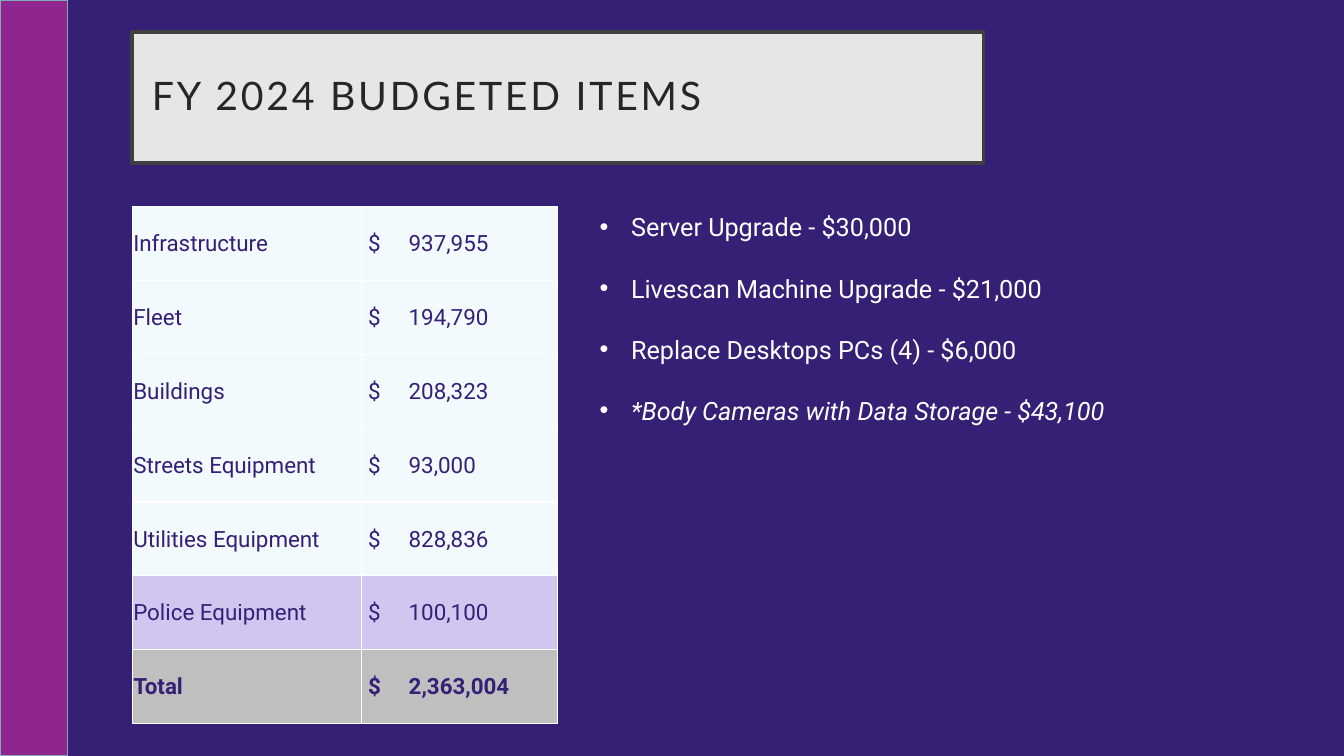
from lxml import etree
from pptx import Presentation
from pptx.dml.color import RGBColor
from pptx.enum.shapes import MSO_SHAPE
from pptx.enum.text import MSO_ANCHOR, MSO_AUTO_SIZE, PP_ALIGN
from pptx.oxml.ns import qn
from pptx.util import Cm, Pt

RECT = MSO_SHAPE.RECTANGLE
MIDDLE, TOP = MSO_ANCHOR.MIDDLE, MSO_ANCHOR.TOP
LEFT = PP_ALIGN.LEFT
FIXED = MSO_AUTO_SIZE.NONE

HUES = {
    "back": "352076", "stripe": "8F268F", "edge": "84A9B9",
    "panel": "E7E6E6", "frame": "404040", "title": "262626",
    "white": "FFFFFF", "ice": "F2FAFE", "lilac": "D0C6F0", "grey": "BFBFBF",
}

COSTS = [
    ("Infrastructure", "937,955", "ice"),
    ("Fleet", "194,790", "ice"),
    ("Buildings", "208,323", "ice"),
    ("Streets Equipment", "93,000", "ice"),
    ("Utilities Equipment", "828,836", "ice"),
    ("Police Equipment", "100,100", "lilac"),
    ("Total", "2,363,004", "grey"),
]
ITEMS = [
    "Server Upgrade - $30,000",
    "Livescan Machine Upgrade - $21,000",
    "Replace Desktops PCs (4) - $6,000",
    "*Body Cameras with Data Storage - $43,100",
]


def hue(name):
    return RGBColor.from_string(HUES[name])


def paint(shape, fill, line, width):
    shape.fill.solid()
    shape.fill.fore_color.rgb = hue(fill)
    shape.line.color.rgb = hue(line)
    shape.line.width = Pt(width)


def place(shape, left, top, width, height):
    shape.left, shape.top = Cm(left), Cm(top)
    shape.width, shape.height = Cm(width), Cm(height)


def write(para, text, size=16, color="back", face="Roboto", bold=False,
          italic=False, before=0, lines=1.0, track=0):
    para.alignment = LEFT
    para.space_before, para.line_spacing = Pt(before), lines
    run = para.add_run()
    run.text = text
    font = run.font
    font.name, font.size, font.bold, font.italic = face, Pt(size), bold, italic
    font.color.rgb = hue(color)
    if track:
        font._element.set("spc", str(track * 100))


def bullet(para, indent):
    props = para._p.get_or_add_pPr()
    props.set("marL", str(Cm(indent)))
    props.set("indent", str(-Cm(indent)))
    etree.SubElement(props, qn("a:buFont")).set("typeface", "Arial")
    etree.SubElement(props, qn("a:buChar")).set("char", "•")


def tab(para, pos):
    stops = etree.SubElement(para._p.get_or_add_pPr(), qn("a:tabLst"))
    etree.SubElement(stops, qn("a:tab"), pos=str(Cm(pos)), algn="l")


def border(cell, color, width):
    props = cell._tc.get_or_add_tcPr()
    for side in ("lnL", "lnR", "lnT", "lnB"):
        line = etree.SubElement(props, qn("a:" + side), w=str(Pt(width)))
        fill = etree.SubElement(line, qn("a:solidFill"))
        etree.SubElement(fill, qn("a:srgbClr"), val=HUES[color])


def add_stripe(slide):
    stripe = slide.shapes.add_shape(RECT, 0, 0, Cm(1.7), Cm(19.05))
    stripe.shadow.inherit = False
    paint(stripe, "stripe", "edge", 1)


def set_title(slide, text):
    title = slide.shapes.title
    place(title, 3.33, 0.81, 21.46, 3.3)
    paint(title, "panel", "frame", 2.5)
    frame = title.text_frame
    frame.auto_size, frame.vertical_anchor = FIXED, MIDDLE
    frame.margin_left = frame.margin_right = Cm(0.5)
    write(frame.paragraphs[0], text, size=28, color="title", face="Lato",
          lines=0.9, track=2)


def set_list(slide, items):
    body = slide.placeholders[1]
    place(body, 14.86, 5.21, 15.67, 5.64)
    frame = body.text_frame
    frame.auto_size, frame.vertical_anchor = FIXED, TOP
    for i, text in enumerate(items):
        para = frame.add_paragraph() if i else frame.paragraphs[0]
        bullet(para, 0.79)
        write(para, text, size=18, color="white", italic=text.startswith("*"),
              before=22 if i else 0)


def fill_cell(cell, text, color, bold, left, stop=None):
    border(cell, "white", 1)
    cell.fill.solid()
    cell.fill.fore_color.rgb = hue(color)
    cell.vertical_anchor = MIDDLE
    cell.margin_left = Cm(left)
    cell.margin_right = cell.margin_top = Cm(0.03)
    cell.margin_bottom = 0
    para = cell.text_frame.paragraphs[0]
    if stop:
        tab(para, stop)
    write(para, text, bold=bold)


def add_costs(slide, costs):
    wide, high = (5.78, 4.93), 1.86
    frame = slide.shapes.add_table(len(costs), 2, Cm(3.33), Cm(5.21),
                                   Cm(sum(wide)), Cm(high * len(costs)))
    table = frame.table
    table.first_row = table.horz_banding = False
    for col, width in zip(table.columns, wide):
        col.width = Cm(width)
    for i, (name, cost, color) in enumerate(costs):
        table.rows[i].height = Cm(high)
        bold = name == "Total"
        fill_cell(table.cell(i, 0), name, color, bold, 0.03)
        fill_cell(table.cell(i, 1), "$\t" + cost, color, bold, 0.17, stop=1.02)


def main():
    deck = Presentation()
    deck.slide_width, deck.slide_height = Cm(33.87), Cm(19.05)
    slide = deck.slides.add_slide(deck.slide_layouts[1])

    # Backdrop
    back = slide.background.fill
    back.solid()
    back.fore_color.rgb = hue("back")
    add_stripe(slide)

    # Content
    set_title(slide, "FY 2024 BUDGETED ITEMS")
    add_costs(slide, COSTS)
    set_list(slide, ITEMS)

    deck.save("out.pptx")


if __name__ == "__main__":
    main()
